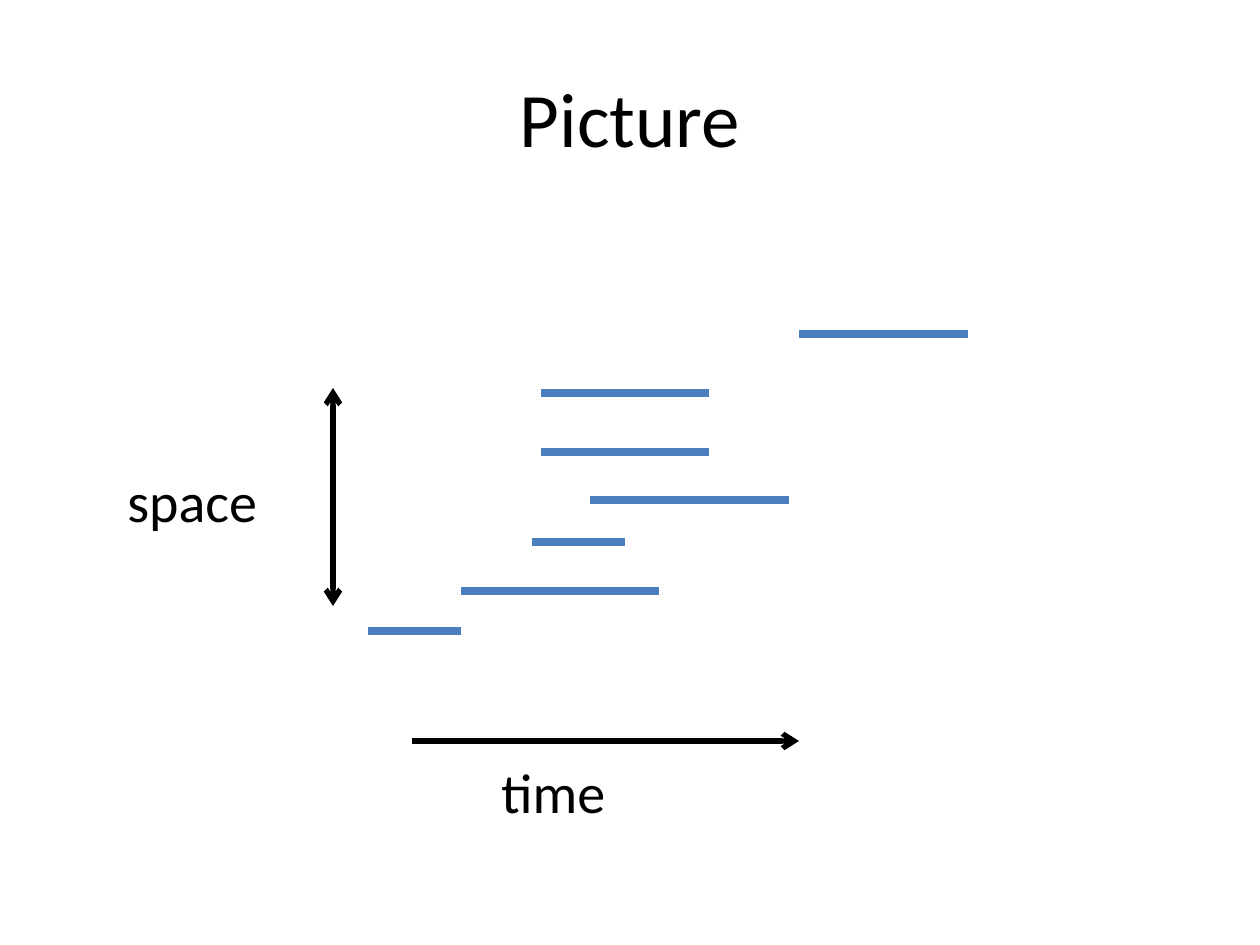
from pptx import Presentation
from pptx import util as u
from pptx.dml.color import RGBColor
from pptx.enum import shapes, text
from pptx.oxml.ns import qn
from lxml import etree

PX_PER_INCH = 126
BLUE = RGBColor(0x4B, 0x7E, 0xBC)
BLACK = RGBColor(0, 0, 0)

# Intervals: start time, end time, height
INTERVALS = [
    (541, 709, 393),
    (541, 709, 452),
    (532, 625, 542),
    (461, 659, 591),
    (590, 789, 500),
    (799, 968, 334),
    (368, 461, 631),
]


def px(n):
    return u.Emu(round(n * u.Inches(1) / PX_PER_INCH))


def add_line(slide, start, end, color, width, ends=()):
    """Draw a line; ends names the arrowheads, headEnd before tailEnd."""
    sp = slide.shapes.add_connector(
        shapes.MSO_CONNECTOR.STRAIGHT, *map(px, start + end))
    sp.line.color.rgb = color
    sp.line.width = u.Pt(width)
    ln = sp.line._get_or_add_ln()
    for name in ends:
        etree.SubElement(ln, qn(f"a:{name}"), type="arrow")
    etree.SubElement(sp._element.spPr, qn("a:effectLst"))


def add_text(slide, box, words, size, align=text.PP_ALIGN.LEFT,
             anchor=text.MSO_ANCHOR.TOP):
    sp = slide.shapes.add_textbox(*map(px, box))
    tf = sp.text_frame
    tf.word_wrap = True
    tf.vertical_anchor = anchor
    p = tf.paragraphs[0]
    p.text = words
    p.alignment = align
    p.font.name = "Calibri"
    p.font.size = u.Pt(size)
    p.font.color.rgb = BLACK


def main():
    prs = Presentation()
    prs.slide_width, prs.slide_height = px(1260), px(945)
    s = prs.slides.add_slide(prs.slide_layouts[6])

    # Title
    add_text(s, (63, 38, 1134, 157), "Picture", 44,
             text.PP_ALIGN.CENTER, text.MSO_ANCHOR.MIDDLE)

    # Intervals in space and time
    for left, right, y in INTERVALS:
        add_line(s, (left, y), (right, y), BLUE, 4.5)

    # Axes and their labels
    add_line(s, (412, 741), (799, 741), BLACK, 3, ["tailEnd"])
    add_line(s, (333, 606), (333, 388), BLACK, 3, ["headEnd", "tailEnd"])
    add_text(s, (489, 751, 220, 81), "time", 32)
    add_text(s, (115, 460, 190, 81), "space", 32)

    prs.save("out.pptx")


if __name__ == "__main__":
    main()
